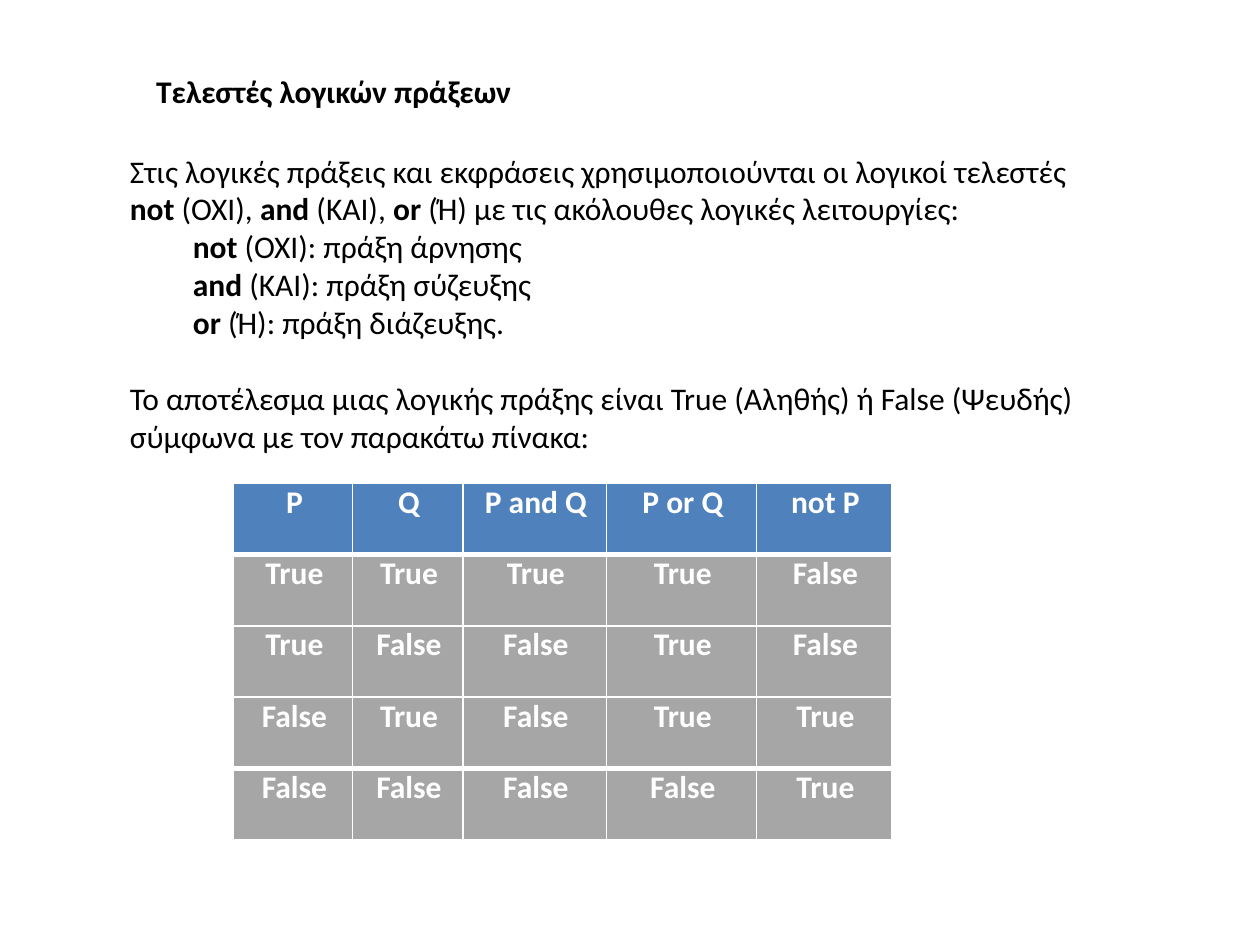
from lxml.etree import SubElement as Sub
from pptx import Presentation
from pptx.dml.color import RGBColor
from pptx.enum.text import MSO_ANCHOR as Anchor, MSO_AUTO_SIZE as Fit, PP_ALIGN as Align
from pptx.oxml.ns import qn
from pptx.util import Pt

# Content: a paragraph is its runs, with bold ones in a pair of stars
TITLE = "*Τελεστές λογικών πράξεων*"
BODY = [  # text, left indent, space before
    ("Στις λογικές πράξεις και εκφράσεις χρησιμοποιούνται οι λογικοί τελεστές "
     "*not* (ΟΧΙ), *and* (ΚΑΙ), *or* (Ή) με τις ακόλουθες λογικές λειτουργίες:", 0, 0),
    ("*not* (OXI): πράξη άρνησης", 36, 0),
    ("*and* (KAI): πράξη σύζευξης", 36, 0),
    ("*or* (Ή): πράξη διάζευξης.", 36, 0),
    ("Το αποτέλεσμα μιας λογικής πράξης είναι True (Αληθής) ή False (Ψευδής) "
     "σύμφωνα με τον παρακάτω πίνακα:", 0, 22),
]
HEAD = ["P", "Q", "P and Q", "P or Q", "not P"]
PAIRS = [(True, True), (True, False), (False, True), (False, False)]
ROWS = [HEAD] + [[str(v) for v in (p, q, p and q, p or q, not p)] for p, q in PAIRS]
WIDTHS = [68, 63, 82, 86, 77]
HIGH = 40.8
BLUE, GRAY, WHITE, BLACK = "4F81BD", "A6A6A6", "FFFFFF", "000000"


def color(code):
    return RGBColor.from_string(code)


def apply(item, form):
    for key, val in form.items():
        setattr(item, key, val)


def write(para, text, ink, indent=0, before=0, align=Align.LEFT):
    apply(para, {"alignment": align, "space_before": Pt(before), "space_after": Pt(0)})
    props = para._p.get_or_add_pPr()
    props.set("marL", str(Pt(indent)))
    props.set("indent", "0")
    Sub(props, qn("a:buNone"))
    for i, part in enumerate(text.split("*")):
        if part:
            run = para.add_run()
            run.text = part
            apply(run.font, {"name": "Calibri", "size": Pt(18), "bold": i % 2 == 1})
            run.font.color.rgb = color(ink)


def place(shape, left, top, width, height, wrap):
    apply(shape, {"left": Pt(left), "top": Pt(top),
                  "width": Pt(width), "height": Pt(height)})
    apply(shape.text_frame, {"word_wrap": wrap, "auto_size": Fit.NONE,
                             "vertical_anchor": Anchor.TOP})
    return shape.text_frame


def border(cell, sides):
    props = cell._tc.get_or_add_tcPr()
    for side, width in sides.items():
        line = Sub(props, qn("a:ln" + side), w=str(Pt(width)))
        Sub(Sub(line, qn("a:solidFill")), qn("a:srgbClr"), val=WHITE)


deck = Presentation()
apply(deck, {"slide_width": Pt(720), "slide_height": Pt(540)})
slide = deck.slides.add_slide(deck.slide_layouts[1])

# Title and body text
frame = place(slide.shapes.title, 82, 37.5, 220, 29, False)
write(frame.paragraphs[0], TITLE, BLACK)
frame = place(slide.placeholders[1], 67, 83, 562, 181, True)
for i, (text, indent, before) in enumerate(BODY):
    para = frame.add_paragraph() if i else frame.paragraphs[0]
    write(para, text, BLACK, indent, before)

# Truth table, with heavy rules below the head and above the last row
last = len(ROWS) - 1
grid = slide.shapes.add_table(len(ROWS), len(HEAD), Pt(133.5), Pt(276),
                              Pt(sum(WIDTHS)), Pt(HIGH * len(ROWS))).table
apply(grid, {"horz_banding": False, "last_row": True})
for col, width in zip(grid.columns, WIDTHS):
    col.width = Pt(width)
for r, row in enumerate(ROWS):
    grid.rows[r].height = Pt(HIGH)
    for c, text in enumerate(row):
        cell = grid.cell(r, c)
        apply(cell, {"margin_" + s: 0 for s in ("left", "right", "top", "bottom")})
        border(cell, {"L": 1, "R": 1, "T": 3 if r in (1, last) else 1,
                      "B": 3 if r in (0, last - 1) else 1})
        cell.fill.solid()
        cell.fill.fore_color.rgb = color(GRAY if r else BLUE)
        write(cell.text_frame.paragraphs[0], f"*{text}*", WHITE, 1.5, 3, Align.CENTER)

deck.save("out.pptx")
